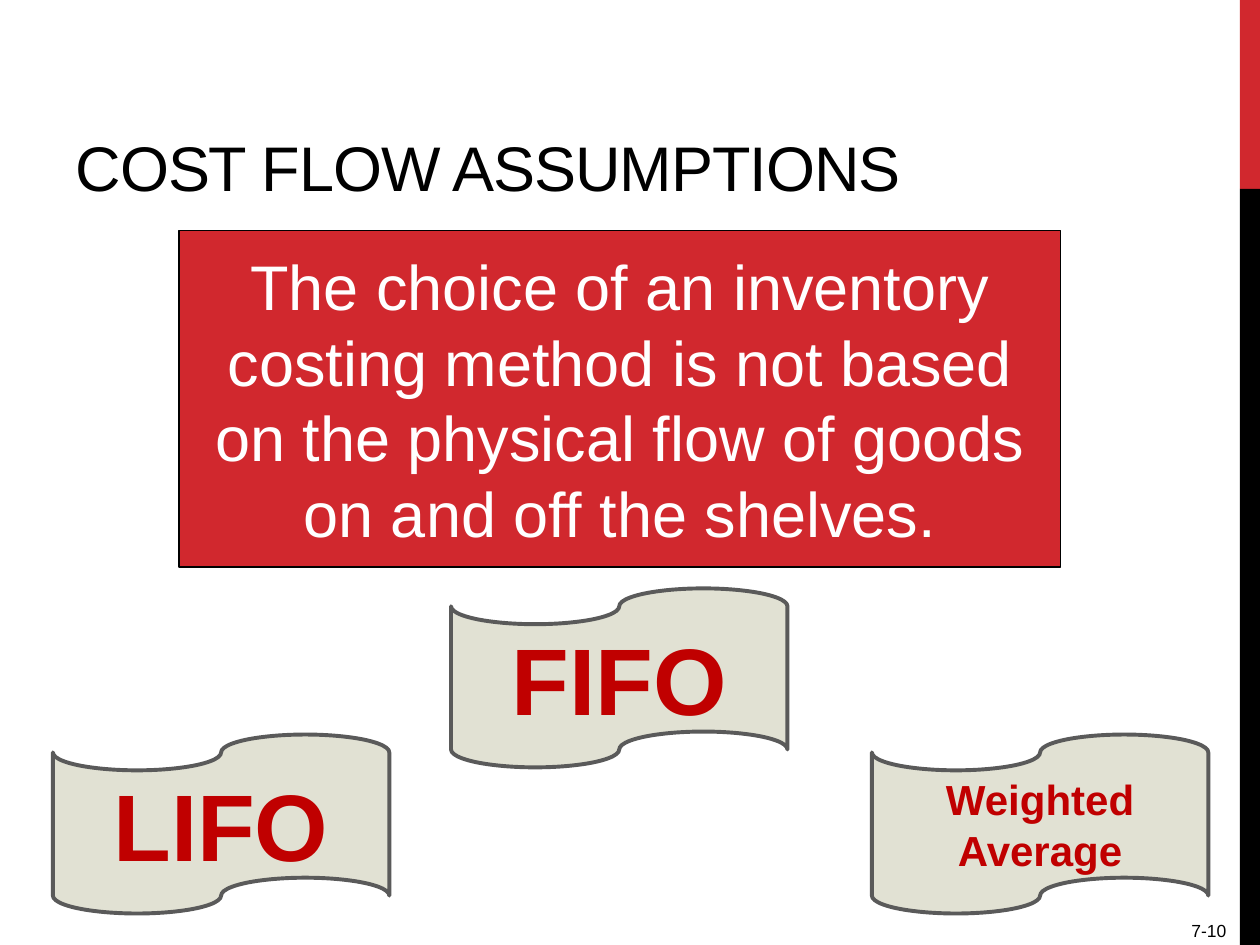
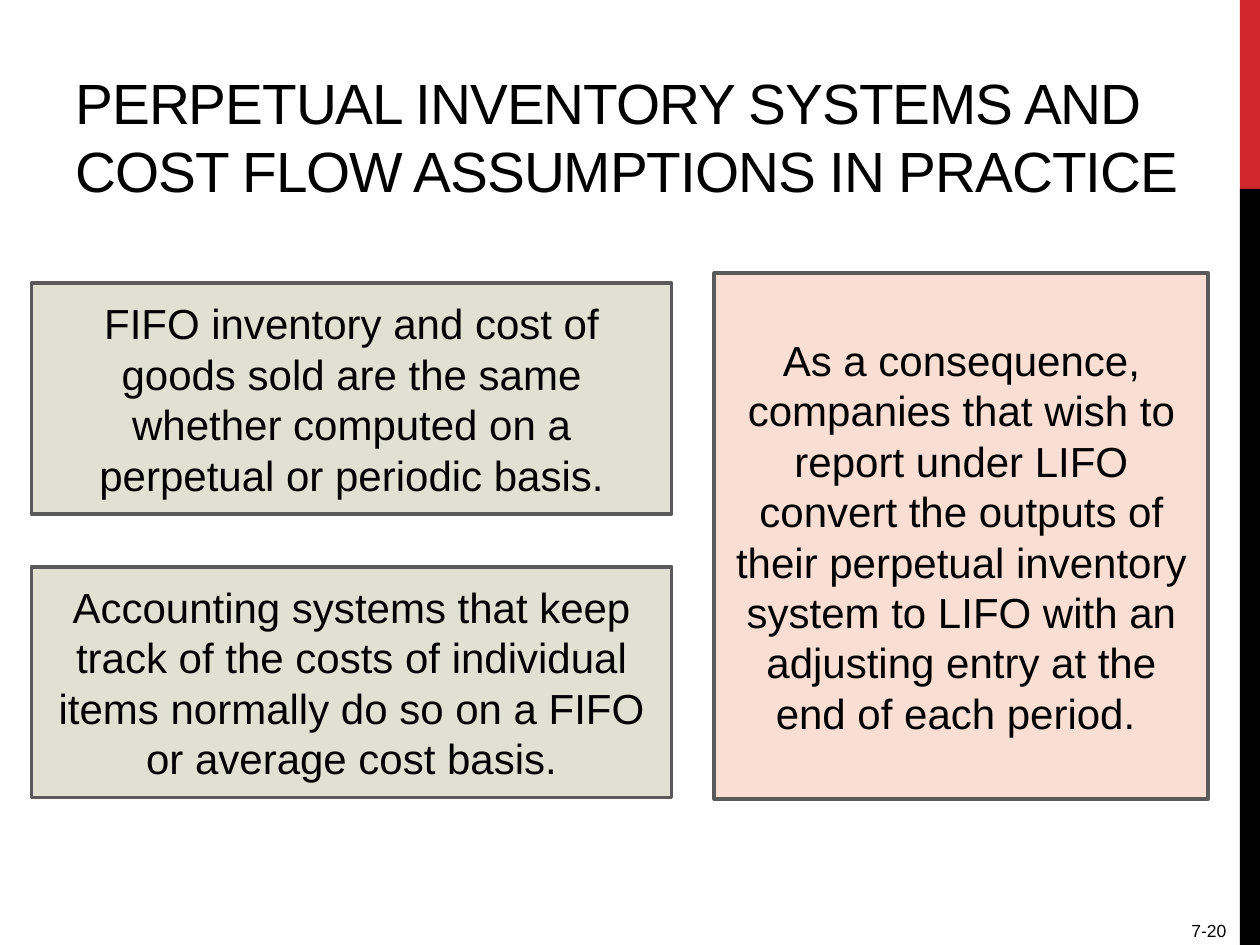
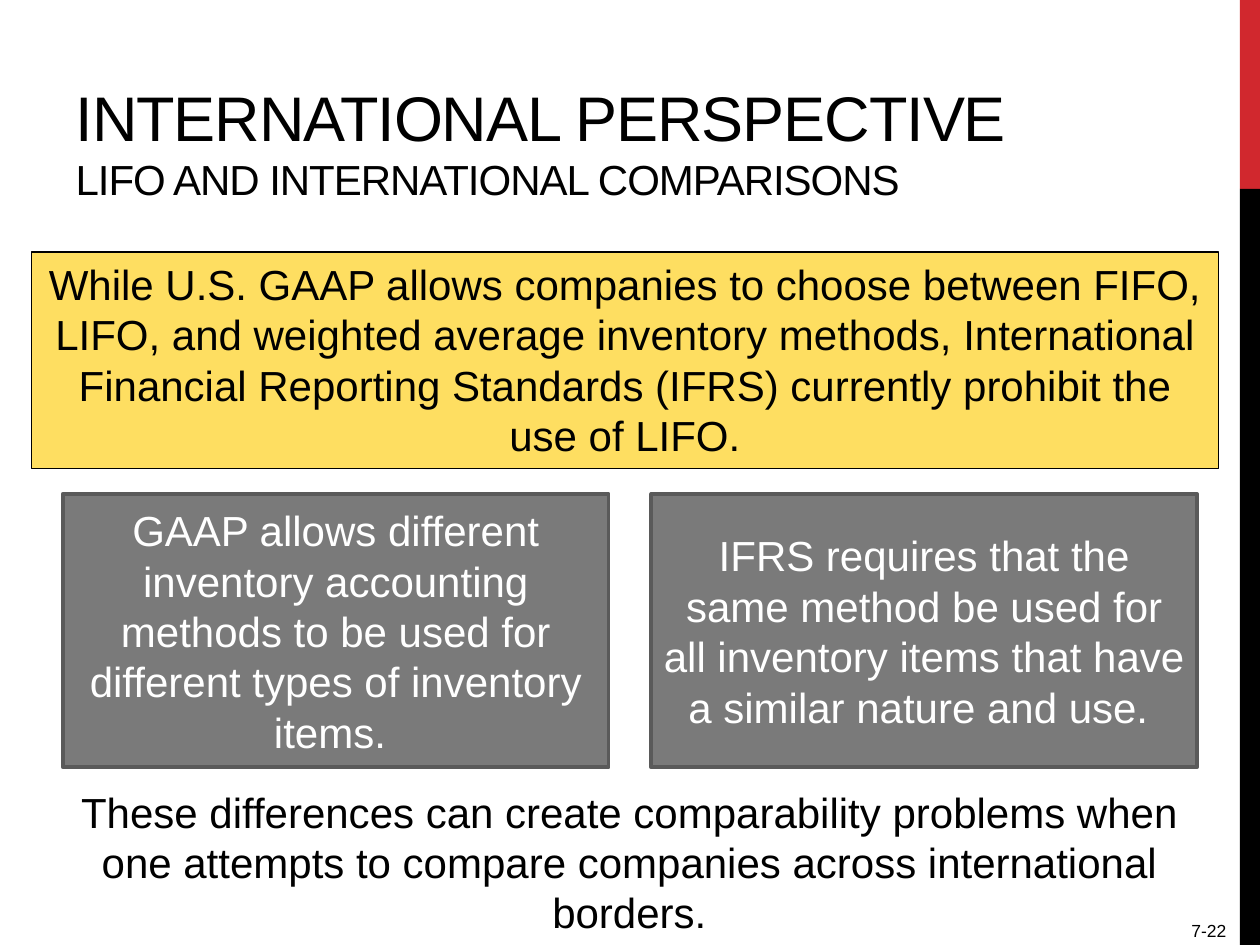
from pptx import Presentation
from pptx.dml.color import RGBColor as RGB
from pptx.enum.shapes import MSO_SHAPE as Geo
from pptx.enum.text import MSO_ANCHOR as Anchor, MSO_AUTO_SIZE as Fit, PP_ALIGN as Align
from pptx.util import Inches, Pt

WIDE, HIGH = 10, 7.5
FONT = "Arial"
BLACK, WHITE = RGB(0, 0, 0), RGB(255, 255, 255)
RED, CRIMSON = RGB(0xD1, 0x28, 0x2E), RGB(0xC0, 0, 0)
STONE, PEACH = RGB(0xE1, 0xE1, 0xD3), RGB(0xF8, 0xDE, 0xD3)
GOLD, GRAY, EDGE = RGB(0xFE, 0xDE, 0x61), RGB(0x7A, 0x7A, 0x7A), RGB(0x5A, 0x5A, 0x5A)

# Box styles: shape, fill, line colour, line width, text colour, bold
STYLES = {
    "claim": (Geo.RECTANGLE, RED, BLACK, 0.75, WHITE, False),
    "tape": (Geo.FLOWCHART_PUNCHED_TAPE, STONE, EDGE, 2.25, CRIMSON, True),
    "fact": (Geo.RECTANGLE, STONE, EDGE, 2.25, BLACK, False),
    "result": (Geo.RECTANGLE, PEACH, EDGE, 2.25, BLACK, False),
    "lead": (Geo.RECTANGLE, GOLD, BLACK, 0.75, BLACK, False),
    "rule": (Geo.RECTANGLE, GRAY, EDGE, 2.25, WHITE, False),
    "close": (None, None, None, 0, BLACK, False),
}

# Sizes shared by boxes of one kind
TAPE, FACT, RULE = (2.67, 1.42), (5.08, 1.83), (4.33, 2.17)

# Slides: number, title lines with sizes, boxes (style, place, text size, text)
SLIDES = [
    ("7-10", [("COST FLOW ASSUMPTIONS", 36)], [
        ("claim", (1.42, 1.83, 7, 2.67), 36,
         "The choice of an inventory costing method is not based on the "
         "physical flow of goods on and off the shelves."),
        ("tape", (0.42, 5.83, *TAPE), 54, "LIFO"),
        ("tape", (3.58, 4.67, *TAPE), 54, "FIFO"),
        ("tape", (6.92, 5.83, *TAPE), 24, "Weighted\vAverage"),
    ]),
    ("7-20", [("PERPETUAL INVENTORY SYSTEMS AND COST FLOW ASSUMPTIONS IN PRACTICE", 32.4)], [
        ("fact", (0.25, 2.25, *FACT), 24,
         "FIFO inventory and cost of goods sold are the same whether "
         "computed on a perpetual or periodic basis."),
        ("fact", (0.25, 4.5, *FACT), 24,
         "Accounting systems that keep track of the costs of individual "
         "items normally do so on a FIFO or average cost basis."),
        ("result", (5.67, 2.17, 3.92, 4.17), 24,
         "As a consequence, companies that wish to report under LIFO convert "
         "the outputs of their perpetual inventory system to LIFO with an "
         "adjusting entry at the end of each period. "),
    ]),
    ("7-22", [("INTERNATIONAL PERSPECTIVE", 36),
              ("LIFO AND INTERNATIONAL COMPARISONS", 24)], [
        ("lead", (0.25, 2, 9.42, 1.72), 24,
         "While U.S. GAAP allows companies to choose between FIFO, LIFO, and "
         "weighted average inventory methods, International Financial "
         "Reporting Standards (IFRS) currently prohibit the use of LIFO."),
        ("close", (0.33, 6.19, 9.33, 1.31), 24,
         "These differences can create comparability problems when one "
         "attempts to compare companies across international borders."),
        ("rule", (5.17, 3.92, *RULE), 24,
         "IFRS requires that the same method be used for all inventory items "
         "that have a similar nature and use. "),
        ("rule", (0.5, 3.92, *RULE), 24,
         "GAAP allows different inventory accounting methods to be used for "
         "different types of inventory items. "),
    ]),
]


def set_font(font, size, color, bold=False):
    font.name, font.size, font.bold = FONT, Pt(size), bold
    font.color.rgb = color


def add_box(slide, place, geo=None, fill=None, line=None, width=0):
    spot = [Inches(n) for n in place]
    if geo is None:
        return slide.shapes.add_textbox(*spot)
    box = slide.shapes.add_shape(geo, *spot)
    box.shadow.inherit = False
    box.fill.solid()
    box.fill.fore_color.rgb = fill
    if line is None:
        box.line.fill.background()
    else:
        box.line.color.rgb, box.line.width = line, Pt(width)
    return box


def write(box, text, size, color, bold=False, align=Align.CENTER, anchor=Anchor.MIDDLE):
    frame = box.text_frame
    frame.word_wrap, frame.vertical_anchor = True, anchor
    para = frame.paragraphs[0]
    para.text, para.alignment = text, align
    set_font(para.font, size, color, bold)


def add_title(slide, lines):
    title = slide.shapes.title
    title.left, title.top, title.width, title.height = map(Inches, (0.5, 0.17, 9.17, 1.5))
    frame = title.text_frame
    frame.auto_size, frame.word_wrap = Fit.NONE, True
    frame.vertical_anchor = Anchor.BOTTOM
    para = frame.paragraphs[0]
    para.alignment = Align.LEFT
    set_font(para.font, lines[0][1], BLACK)
    for i, (text, size) in enumerate(lines):
        if i:
            para.add_line_break()
        run = para.add_run()
        run.text, run.font.size = text, Pt(size)
        run.font._element.set("spc", "-60")  # tight letter spacing


def add_frame(slide, number):
    # Side band and slide number
    band, split = 0.16, HIGH / 5
    add_box(slide, (WIDE - band, 0, band, split), Geo.RECTANGLE, RED)
    add_box(slide, (WIDE - band, split, band, HIGH - split), Geo.RECTANGLE, BLACK)
    write(add_box(slide, (8.75, 7.25, 1.08, 0.27)), number, 10, BLACK,
          align=Align.RIGHT, anchor=Anchor.TOP)


def main():
    prs = Presentation()
    prs.slide_width, prs.slide_height = Inches(WIDE), Inches(HIGH)
    for number, lines, boxes in SLIDES:
        slide = prs.slides.add_slide(prs.slide_layouts[5])
        add_frame(slide, number)
        add_title(slide, lines)
        for style, place, size, text in boxes:
            *look, color, bold = STYLES[style]
            anchor = Anchor.TOP if style in ("lead", "close") else Anchor.MIDDLE
            write(add_box(slide, place, *look), text, size, color, bold, anchor=anchor)
    prs.save("out.pptx")


if __name__ == "__main__":
    main()
